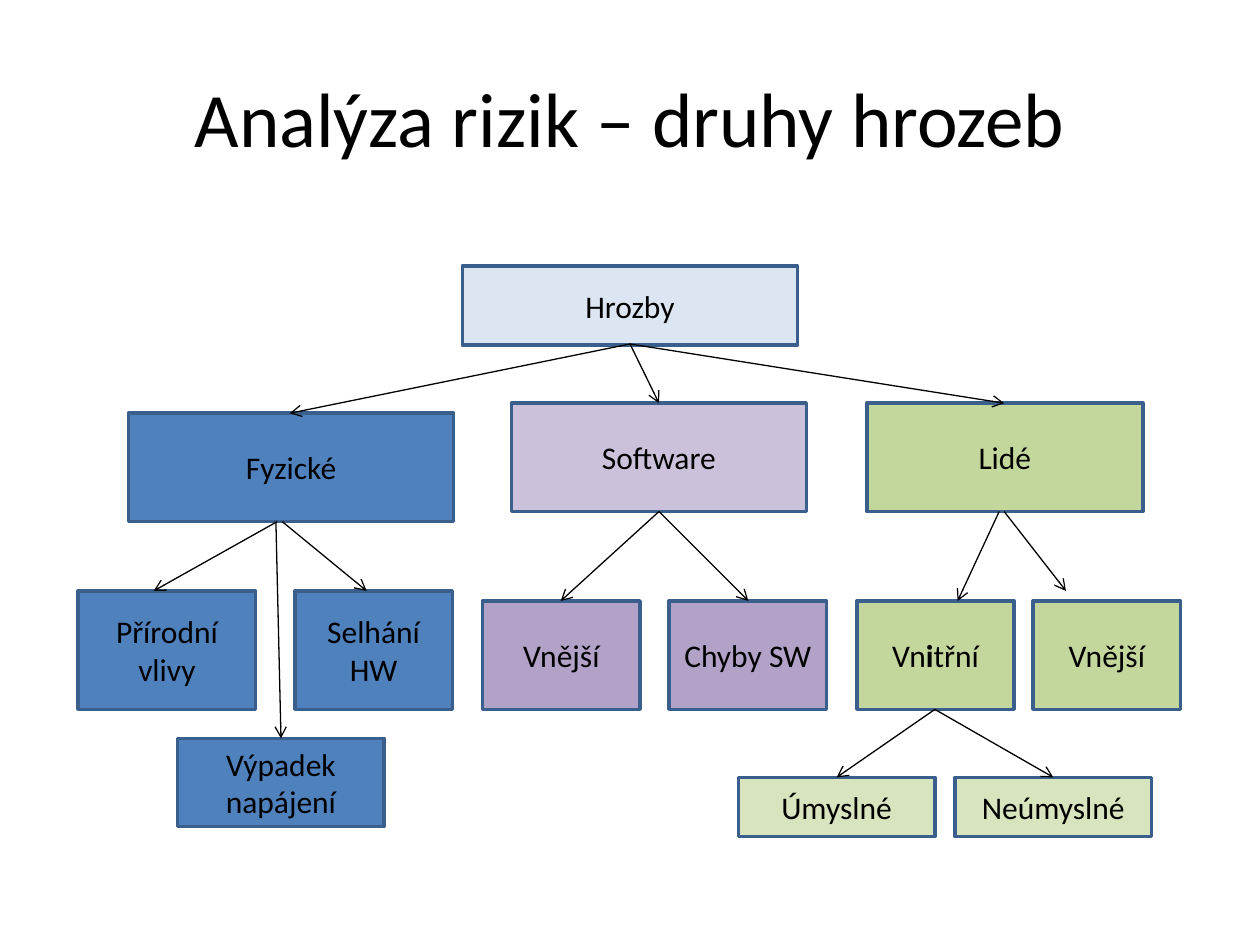
"""Build a slide with a tree of threat types for risk analysis."""
from lxml.etree import SubElement
from pptx import Presentation
from pptx.dml.color import RGBColor
from pptx.enum.shapes import MSO_CONNECTOR, MSO_SHAPE
from pptx.enum.text import MSO_ANCHOR, PP_ALIGN
from pptx.oxml.ns import qn
from pptx.util import Inches, Pt

COLORS = {
    "text": "000000", "border": "3A5F8C", "root": "DCE6F2",
    "physical": "4F81BD", "software": "CCC1DA", "software_kind": "B3A2C7",
    "people": "C3D69B", "intent": "D7E4BD",
}
FONT = {"name": "Calibri"}
FRAME = {"word_wrap": True, "vertical_anchor": MSO_ANCHOR.MIDDLE}


def color(name):
    return RGBColor.from_string(COLORS[name])


def write(box, text, size):
    frame = box.text_frame
    for key, value in FRAME.items():
        setattr(frame, key, value)
    for index, line in enumerate(text.split("\n")):
        para = frame.add_paragraph() if index else frame.paragraphs[0]
        para.alignment = PP_ALIGN.CENTER
        for part, words in enumerate(line.split("*")):
            span = para.add_run()
            span.text = words
            for key, value in {**FONT, "size": Pt(size), "bold": part % 2 == 1}.items():
                setattr(span.font, key, value)
            span.font.color.rgb = color("text")


deck = Presentation()
deck.slide_width, deck.slide_height = Inches(10), Inches(7.5)
page = deck.slides.add_slide(deck.slide_layouts[6])

title = page.shapes.add_textbox(Inches(0.5), Inches(0.3), Inches(9), Inches(1.25))
write(title, "Analýza rizik – druhy hrozeb", 44)

boxes = [
    ("Hrozby", "root", 3.67, 2.11, 2.66, 0.63),
    ("Fyzické", "physical", 1.02, 3.28, 2.58, 0.86),
    ("Software", "software", 4.06, 3.2, 2.34, 0.86),
    ("Lidé", "people", 6.88, 3.2, 2.19, 0.86),
    ("Přírodní\nvlivy", "physical", 0.62, 4.69, 1.41, 0.94),
    ("Selhání\nHW", "physical", 2.34, 4.69, 1.25, 0.94),
    ("Výpadek\nnapájení", "physical", 1.41, 5.86, 1.64, 0.7),
    ("Vnější", "software_kind", 3.83, 4.77, 1.25, 0.86),
    ("Chyby SW", "software_kind", 5.31, 4.77, 1.25, 0.86),
    ("Vn*i*třní", "people", 6.8, 4.77, 1.25, 0.86),
    ("Vnější", "people", 8.2, 4.77, 1.17, 0.86),
    ("Úmyslné", "intent", 5.86, 6.17, 1.56, 0.47),
    ("Neúmyslné", "intent", 7.58, 6.17, 1.56, 0.47),
]
for text, fill, *place in boxes:
    box = page.shapes.add_shape(MSO_SHAPE.RECTANGLE, *map(Inches, place))
    box.shadow.inherit = False
    box.fill.solid()
    box.fill.fore_color.rgb = color(fill)
    box.line.color.rgb = color("border")
    box.line.width = Pt(2)
    write(box, text, 18)

branches = [
    ((5, 2.73), [(2.3, 3.28), (5.23, 3.2), (7.97, 3.2)]),
    ((2.2, 4.14), [(1.22, 4.69)]),
    ((2.24, 4.14), [(2.91, 4.69)]),
    ((2.19, 4.14), [(2.23, 5.86)]),
    ((5.23, 4.06), [(4.45, 4.77), (5.94, 4.77)]),
    ((7.93, 4.06), [(7.6, 4.77)]),
    ((7.97, 4.06), [(8.46, 4.69)]),
    ((7.42, 5.63), [(6.64, 6.17), (8.36, 6.17)]),
]
for start, ends in branches:
    for end in ends:
        arrow = page.shapes.add_connector(MSO_CONNECTOR.STRAIGHT, *map(Inches, start + end))
        arrow.line.color.rgb = color("text")
        arrow.line.width = Pt(0.75)
        SubElement(arrow.line._get_or_add_ln(), qn("a:tailEnd"), type="arrow")
        SubElement(arrow._element.spPr, qn("a:effectLst"))

deck.save("out.pptx")
